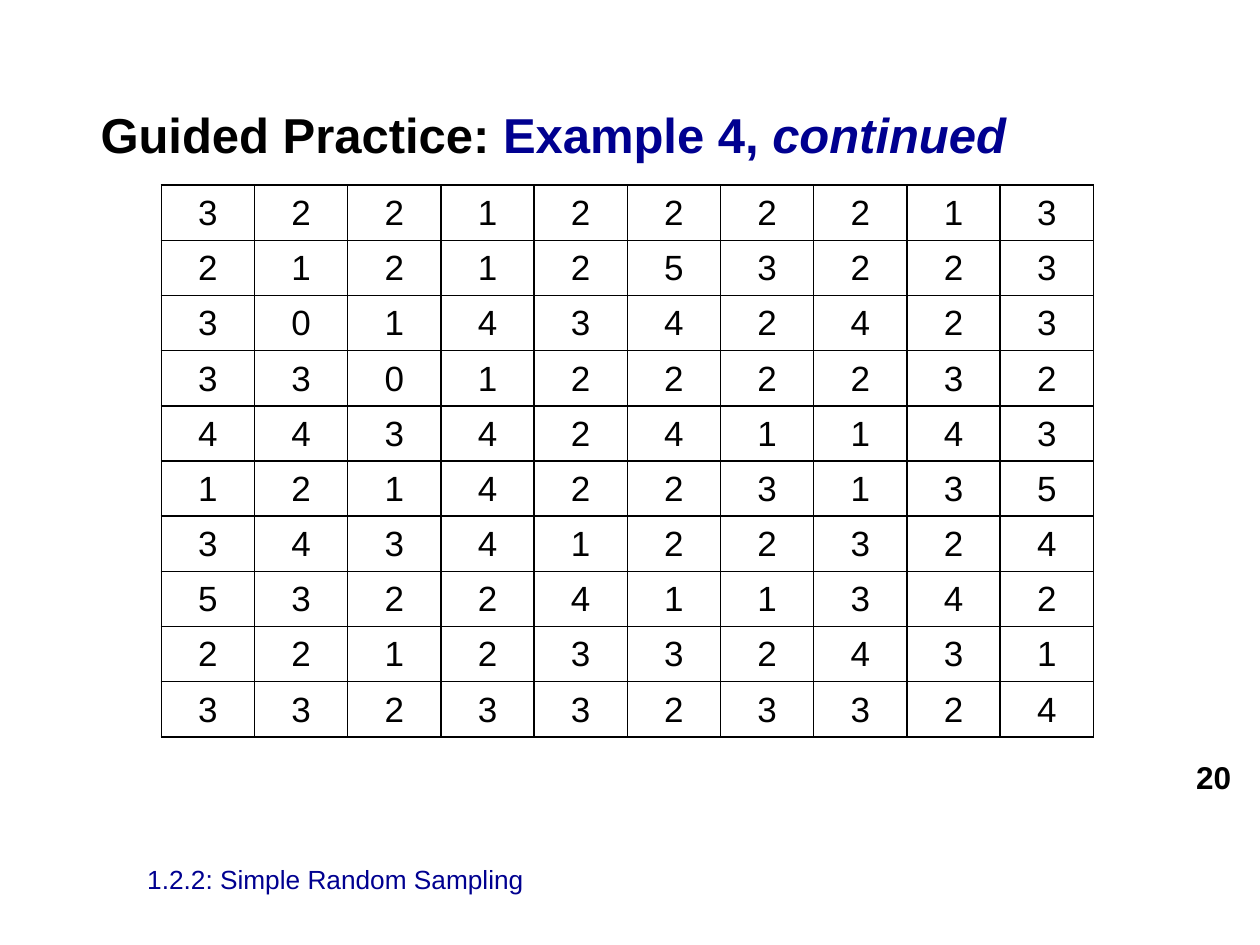
from pptx import Presentation
from pptx.dml.color import RGBColor
from pptx.enum.text import MSO_ANCHOR, PP_ALIGN
from pptx.oxml import parse_xml
from pptx.oxml.ns import nsdecls
from pptx.util import Inches, Pt

BLACK = RGBColor(0x00, 0x00, 0x00)
NAVY = RGBColor(0x00, 0x00, 0x90)
WHITE = RGBColor(0xFF, 0xFF, 0xFF)
FONT = "Arial"

ROWS = [
    "3221222213",
    "2121253223",
    "3014342423",
    "3301222232",
    "4434241143",
    "1214223135",
    "3434122324",
    "5322411342",
    "2212332431",
    "3323323324",
]


def add_run(para, text, size, color=BLACK, bold=False, italic=False):
    run = para.add_run()
    run.text = text
    font = run.font
    font.name, font.size = FONT, Pt(size)
    font.bold, font.italic = bold, italic
    font.color.rgb = color


def add_text(slide, left, top, width, height, anchor=MSO_ANCHOR.MIDDLE,
             align=PP_ALIGN.LEFT):
    box = slide.shapes.add_textbox(
        Inches(left), Inches(top), Inches(width), Inches(height))
    frame = box.text_frame
    frame.word_wrap = True
    frame.vertical_anchor = anchor
    para = frame.paragraphs[0]
    para.alignment = align
    return frame, para


def set_border(cell):
    props = cell._tc.get_or_add_tcPr()
    for pos, side in enumerate(("lnL", "lnR", "lnT", "lnB")):
        # Border lines come before the fill
        props.insert(pos, parse_xml(
            f'<a:{side} {nsdecls("a")} w="{Pt(1)}"><a:solidFill>'
            f'<a:srgbClr val="{BLACK}"/></a:solidFill></a:{side}>'))


def fill_cell(cell, text):
    cell.fill.solid()
    cell.fill.fore_color.rgb = WHITE
    cell.vertical_anchor = MSO_ANCHOR.MIDDLE
    cell.margin_left = cell.margin_right = cell.margin_top = Inches(0.01)
    cell.margin_bottom = 0
    para = cell.text_frame.paragraphs[0]
    para.alignment = PP_ALIGN.CENTER
    add_run(para, text, 20)
    set_border(cell)


def add_grid(slide, left, top, width, height):
    count = len(ROWS)
    table = slide.shapes.add_table(
        count, len(ROWS[0]), Inches(left), Inches(top),
        Inches(width), Inches(height)).table
    table.first_row = table.horz_banding = False
    for r, row in enumerate(ROWS):
        table.rows[r].height = Inches(height / count)
        for c, digit in enumerate(row):
            fill_cell(table.cell(r, c), digit)


def main():
    deck = Presentation()
    deck.slide_width, deck.slide_height = Inches(10), Inches(7.5)
    slide = deck.slides.add_slide(deck.slide_layouts[6])

    # Title
    frame, para = add_text(slide, 0.7, 0.74, 8.59, 5.47, MSO_ANCHOR.TOP)
    frame.margin_top = Inches(0.09)
    add_run(para, "Guided Practice: ", 28, bold=True)
    add_run(para, "Example 4, ", 28, NAVY, bold=True)
    add_run(para, "continued", 28, NAVY, bold=True, italic=True)

    # Page number
    _, para = add_text(slide, 9.07, 6.01, 0.8, 0.31, align=PP_ALIGN.RIGHT)
    add_run(para, "20", 18, bold=True)

    # Footer
    _, para = add_text(slide, 1.07, 6.83, 6.28, 0.29)
    add_run(para, "1.2.2: Simple Random Sampling", 15, NAVY)

    # Number table
    add_grid(slide, 1.28, 1.47, 7.4, 4.38)

    deck.save("out.pptx")


if __name__ == "__main__":
    main()
